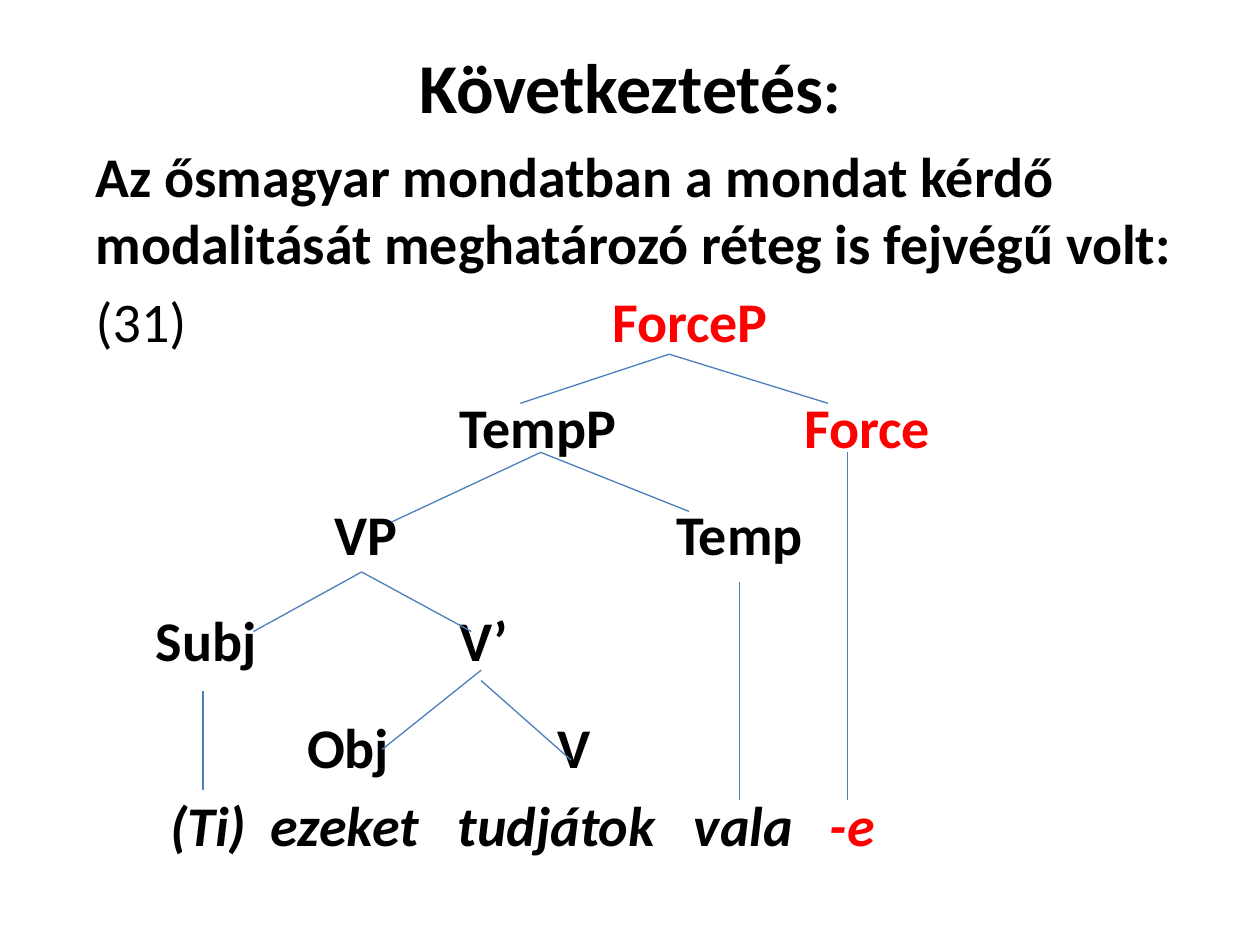
from dataclasses import dataclass

from lxml import etree
from pptx import Presentation
from pptx.dml.color import RGBColor
from pptx.enum.shapes import MSO_CONNECTOR
from pptx.enum.text import MSO_ANCHOR, PP_ALIGN
from pptx.oxml.ns import qn
from pptx.slide import Slide
from pptx.text.text import TextFrame, _Run
from pptx.util import Cm, Pt

STRAIGHT = MSO_CONNECTOR.STRAIGHT
MIDDLE = MSO_ANCHOR.MIDDLE
CENTER = PP_ALIGN.CENTER

FONT = "Calibri"
BODY_SIZE = 32
COLORS = {"text": "000000", "force": "FF0000", "branch": "4B7EBC"}
ROW_GAP = 6
LEVEL_GAP = 22.5


@dataclass(frozen=True)
class Word:
    text: str
    tab: float = 0  # cm from the left edge of the text; 0 means no tab
    color: str = "text"
    bold: bool = True
    italic: bool = False


@dataclass(frozen=True)
class Row:
    words: tuple[Word, ...]
    gap: float = LEVEL_GAP


@dataclass(frozen=True)
class Branching:
    """Lines in cm that run from one node to each of its children."""
    node: tuple[float, float]
    children: tuple[tuple[float, float], ...]


ROWS = (
    Row((Word("Az ősmagyar mondatban a mondat kérdő modalitását "
              "meghatározó réteg is fejvégű volt:"),), ROW_GAP),
    Row((Word("(31)", bold=False), Word("ForceP", 10.41, "force")), ROW_GAP),
    Row((Word("TempP", 7.34), Word("Force", 14.28, "force"))),
    Row((Word("VP", 4.82), Word("Temp", 11.7))),
    Row((Word("Subj", 1.21), Word("V’", 7.34))),
    Row((Word("Obj", 4.26), Word("V", 9.3))),
    Row((Word("(Ti)", 1.5, italic=True), Word("ezeket", 3.53, italic=True),
         Word("tudjátok", 7.3, italic=True), Word("vala", 12.06, italic=True),
         Word("-e", 14.8, "force", italic=True)), ROW_GAP),
)

BRANCHINGS = (
    Branching((13.49, 7.14), ((10.49, 8.13), (16.69, 8.13))),  # ForceP
    Branching((10.9, 9.12), ((7.9, 10.52), (13.89, 10.31))),  # TempP
    Branching((7.29, 11.53), ((5.11, 12.73), (9.5, 12.73))),  # VP
    Branching((9.7, 13.51), ((7.7, 15.11),)),  # V’ to Obj
    Branching((9.7, 13.72), ((11.51, 15.32),)),  # V’ to V
    Branching((17.09, 9.12), ((17.09, 16.13),)),  # Force to -e
    Branching((14.91, 11.73), ((14.91, 16.13),)),  # Temp to vala
    Branching((4.09, 13.92), ((4.09, 15.93),)),  # Subj to (Ti)
)


def format_run(run: _Run, size: float, color: str = "text",
               bold: bool = True, italic: bool = False) -> None:
    run.font.name = FONT
    run.font.size = Pt(size)
    run.font.bold = bold
    run.font.italic = italic
    run.font.color.rgb = RGBColor.from_string(COLORS[color])


def add_text_frame(slide: Slide, left: float, top: float,
                   width: float, height: float) -> TextFrame:
    box = slide.shapes.add_textbox(Cm(left), Cm(top), Cm(width), Cm(height))
    box.text_frame.word_wrap = True
    return box.text_frame


def add_title(slide: Slide) -> None:
    frame = add_text_frame(slide, 1.27, 0.53, 22.86, 2.39)
    frame.vertical_anchor = MIDDLE
    heading = frame.paragraphs[0]
    heading.alignment = CENTER
    for text, size in (("Következtetés", 40), (":", 36)):
        run = heading.add_run()
        run.text = text
        format_run(run, size)


def add_rows(slide: Slide) -> None:
    """Write the statement and the tree labels, placed by tab stops."""
    frame = add_text_frame(slide, 0.71, 2.72, 23.8, 15.6)
    frame.margin_left = Cm(1.22)
    for index, row in enumerate(ROWS):
        paragraph = frame.add_paragraph() if index else frame.paragraphs[0]
        paragraph.space_before = Pt(row.gap)
        tabs = [word.tab for word in row.words if word.tab]
        if tabs:
            properties = paragraph._p.get_or_add_pPr()
            tab_list = etree.SubElement(properties, qn("a:tabLst"))
            for tab in tabs:
                etree.SubElement(tab_list, qn("a:tab"), pos=str(Cm(tab)), algn="l")
        for word in row.words:
            run = paragraph.add_run()
            run.text = f"\t{word.text}" if word.tab else word.text
            format_run(run, BODY_SIZE, word.color, word.bold, word.italic)


def add_branching(slide: Slide, branching: Branching) -> None:
    start = [Cm(value) for value in branching.node]
    for child in branching.children:
        end = [Cm(value) for value in child]
        branch = slide.shapes.add_connector(STRAIGHT, *start, *end)
        branch.line.color.rgb = RGBColor.from_string(COLORS["branch"])
        branch.line.width = Pt(0.75)
        etree.SubElement(branch._element.spPr, qn("a:effectLst"))


def main() -> None:
    presentation = Presentation()
    presentation.slide_width = Cm(25.4)
    presentation.slide_height = Cm(19.05)
    slide = presentation.slides.add_slide(presentation.slide_layouts[6])
    add_title(slide)
    add_rows(slide)
    for branching in BRANCHINGS:
        add_branching(slide, branching)
    presentation.save("out.pptx")


if __name__ == "__main__":
    main()
